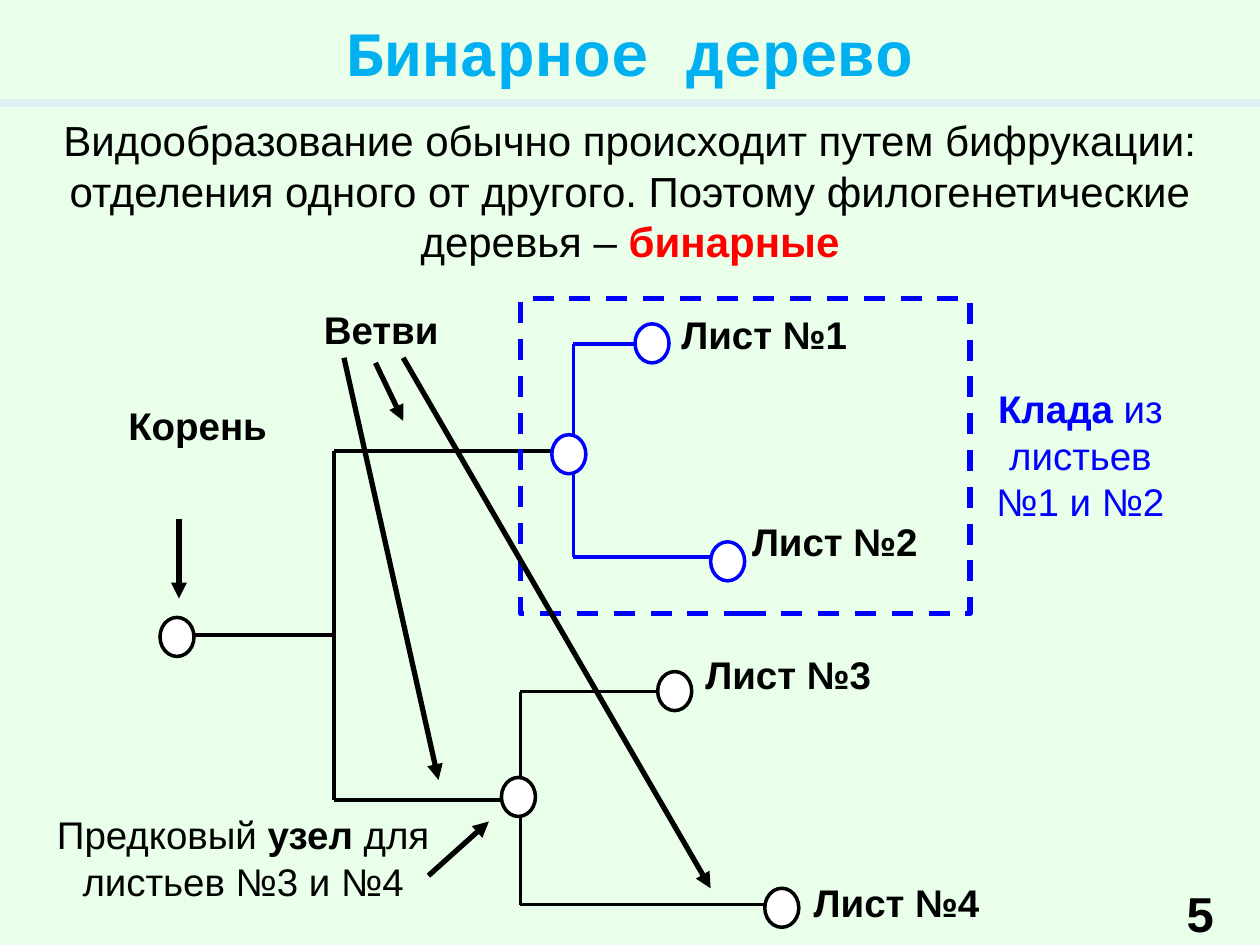
import pptx
import pptx.dml.color
import pptx.enum.dml
import pptx.enum.shapes
import pptx.enum.text
import pptx.oxml.ns
import pptx.util
from lxml import etree

RGB = pptx.dml.color.RGBColor
BLACK = RGB(0, 0, 0)
WHITE = RGB(255, 255, 255)
BLUE = RGB(0, 0, 255)
RED = RGB(255, 0, 0)
SKY = RGB(0, 0xB0, 0xF0)
MINT = RGB(0xE9, 0xFF, 0xE9)
PALE = RGB(0xE0, 0xF1, 0xF2)

LEFT = pptx.enum.text.PP_ALIGN.LEFT
CENTER = pptx.enum.text.PP_ALIGN.CENTER
SHAPE = pptx.enum.shapes.MSO_SHAPE

# The slide is a grid of 100 columns by 75 rows.
COLUMNS, ROWS = 100, 75
CELL = pptx.util.Inches(0.1)
NODE_WIDTH, NODE_HEIGHT = 2.7, 3.1

# trunk column, upper row, lower row, upper end, lower end, colour
FORKS = [
    (26.5, 35.8, 63.5, 45.5, 39.8, BLACK),
    (45.5, 27.3, 44.2, 50.4, 56.4, BLUE),
    (41.3, 54.9, 71.8, 52.2, 60.7, BLACK),
]
# left, top, colour
NODES = [
    (12.7, 49, BLACK),
    (43.8, 34.5, BLUE),
    (39.8, 61.7, BLACK),
    (50.4, 25.7, BLUE),
    (56.4, 43, BLUE),
    (52.2, 53.3, BLACK),
    (60.7, 70.5, BLACK),
]
# left, top of the leaf labels, numbered in order
LEAVES = [(53.1, 24.2), (58.7, 40.6), (55, 51.2), (63.6, 69.3)]
# start column and row, end column and row
ARROWS = [
    (14.2, 41.2, 14.2, 47.5),
    (34, 69.5, 38.8, 65.2),
    (27.3, 28.4, 34.8, 61.9),
    (29.8, 28.8, 32, 33.4),
    (32, 28.4, 56.4, 70.5),
]


def cells(*counts):
    return [round(count * CELL) for count in counts]


def write(shape, runs, size, align, font="Arial", anchor=pptx.enum.text.MSO_ANCHOR.TOP):
    """Fill the shape with one paragraph of (text, bold, colour) runs."""
    frame = shape.text_frame
    frame.word_wrap = True
    frame.auto_size = pptx.enum.text.MSO_AUTO_SIZE.NONE
    frame.vertical_anchor = anchor
    paragraph = frame.paragraphs[0]
    paragraph.alignment = align
    for text, bold, colour in runs:
        run = paragraph.add_run()
        run.text = text
        looks = {"name": font, "size": pptx.util.Pt(size), "bold": bold}
        for name, value in looks.items():
            setattr(run.font, name, value)
        run.font.color.rgb = colour


def fill_placeholder(holder, box, *text, **options):
    for side, value in zip(("left", "top", "width", "height"), cells(*box)):
        setattr(holder, side, value)
    write(holder, *text, **options)


def add_label(slide, box, runs, size=22, align=CENTER):
    write(slide.shapes.add_textbox(*cells(*box)), runs, size, align)


def add_line(slide, ends, colour, width=2, arrow=False):
    line = slide.shapes.add_connector(
        pptx.enum.shapes.MSO_CONNECTOR.STRAIGHT, *cells(*ends))
    line.line.color.rgb = colour
    line.line.width = pptx.util.Pt(width)
    if arrow:
        etree.SubElement(line.line._get_or_add_ln(),
                         pptx.oxml.ns.qn("a:tailEnd"), type="triangle")
    etree.SubElement(line._element.spPr, pptx.oxml.ns.qn("a:effectLst"))


def add_fork(slide, trunk, upper, lower, upper_end, lower_end, colour):
    add_line(slide, (trunk, upper, trunk, lower), colour)
    add_line(slide, (trunk, upper, upper_end, upper), colour)
    add_line(slide, (trunk, lower, lower_end, lower), colour)


def add_outline(slide, kind, box, colour, width):
    outline = slide.shapes.add_shape(kind, *cells(*box))
    outline.shadow.inherit = False
    outline.line.color.rgb = colour
    outline.line.width = pptx.util.Pt(width)
    return outline


def add_node(slide, left, top, colour):
    node = add_outline(slide, SHAPE.OVAL, (left, top, NODE_WIDTH, NODE_HEIGHT), colour, 2)
    node.fill.solid()
    node.fill.fore_color.rgb = WHITE


def add_clade_frame(slide):
    frame = add_outline(slide, SHAPE.RECTANGLE, (41.3, 23.7, 35.7, 25), BLUE, 3)
    frame.fill.background()
    frame.line.dash_style = pptx.enum.dml.MSO_LINE.DASH


def add_heading(slide):
    title, body = slide.placeholders
    fill_placeholder(title, (0, 0, COLUMNS, 8.2), [("Бинарное дерево", True, SKY)],
                     36, CENTER, font="Courier New",
                     anchor=pptx.enum.text.MSO_ANCHOR.MIDDLE)
    fill_placeholder(body, (3.1, 8.6, 93.8, 13), [
        ("Видообразование обычно происходит путем бифрукации: отделения одного "
         "от другого. Поэтому филогенетические деревья – ", False, BLACK),
        ("бинарные", True, RED)], 24, CENTER)
    properties = body.text_frame.paragraphs[0]._p.get_or_add_pPr()
    for name in ("marL", "indent"):
        properties.set(name, "0")
    etree.SubElement(properties, pptx.oxml.ns.qn("a:buNone"))
    add_line(slide, (COLUMNS, 8.2, 0, 8.2), PALE, 4.75)


def add_labels(slide):
    add_label(slide, (9.2, 31.4, 15.8, 10.8), [("Корень", True, BLACK)], align=LEFT)
    add_label(slide, (20.3, 23.8, 19.9, 5.4), [("Ветви", True, BLACK)])
    add_label(slide, (3.1, 63.9, 32.4, 10.2), [
        ("Предковый ", False, BLACK), ("узел", True, BLACK),
        (" для листьев №3 и №4", False, BLACK)])
    add_label(slide, (77.9, 30.1, 15.7, 10.8), [
        ("Клада", True, BLUE), (" из листьев №1 и №2", False, BLUE)])
    for number, (left, top) in enumerate(LEAVES, 1):
        add_label(slide, (left, top, 18.9, 5.1),
                  [(f"Лист №{number}", True, BLACK)], align=LEFT)
    add_label(slide, (91.3, 69.6, 7.9, 5.4), [("5", True, BLACK)], size=28)


def main():
    deck = pptx.Presentation()
    deck.slide_width, deck.slide_height = cells(COLUMNS, ROWS)
    slide = deck.slides.add_slide(deck.slide_layouts[1])
    slide.background.fill.solid()
    slide.background.fill.fore_color.rgb = MINT

    add_heading(slide)
    add_line(slide, (14.2, 50.4, 26.5, 50.4), BLACK)
    for fork in FORKS:
        add_fork(slide, *fork)
    for node in NODES:
        add_node(slide, *node)
    add_clade_frame(slide)
    add_labels(slide)
    for arrow in ARROWS:
        add_line(slide, arrow, BLACK, 3, arrow=True)
    deck.save("out.pptx")


if __name__ == "__main__":
    main()
